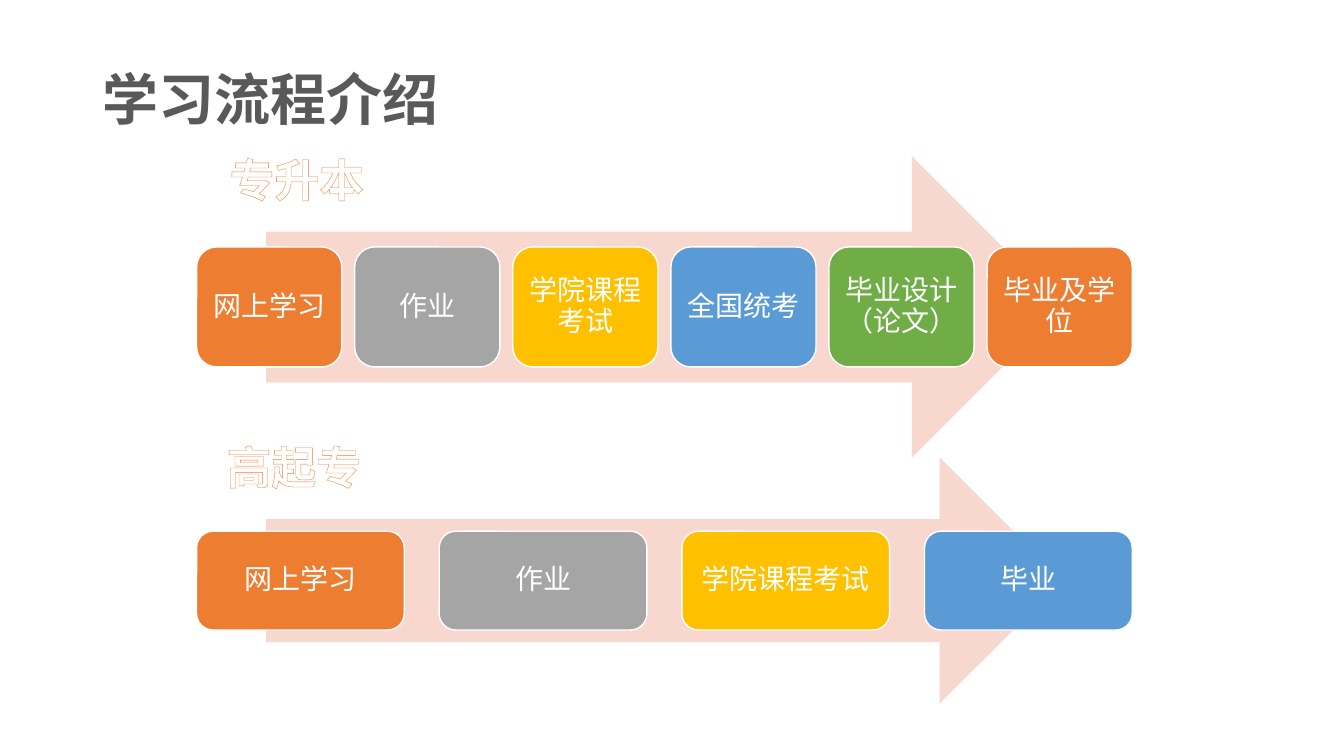
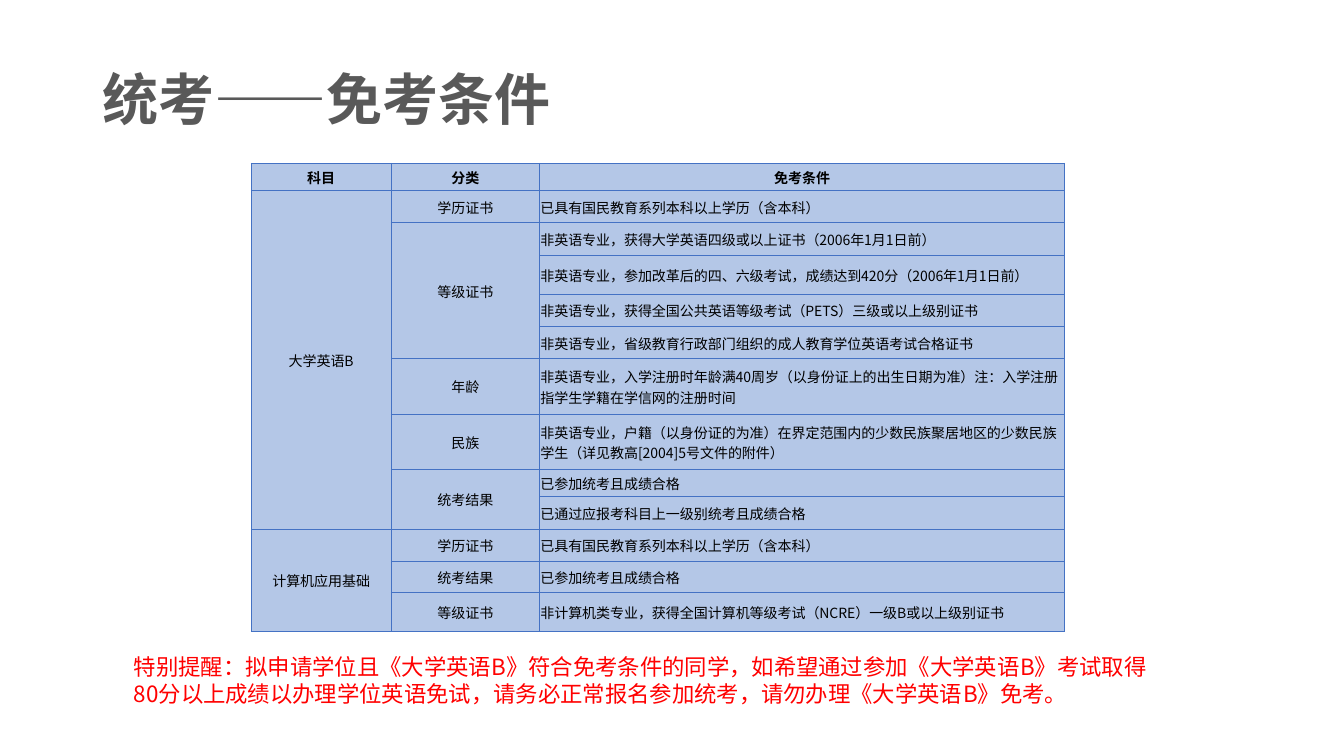
from lxml import etree
from pptx import Presentation
from pptx.dml.color import RGBColor
from pptx.enum import shapes, text
from pptx.oxml import ns
from pptx.util import Inches, Pt

HUES = {
    "title": "595959", "arrow": "F8D7CE", "white": "FFFFFF", "black": "000000",
    "orange": "ED7D31", "gray": "A5A5A5", "gold": "FFC000", "blue": "5B9BD5",
    "green": "70AD47", "cell": "B4C7E7", "border": "4472C4", "red": "FF0000",
}
FACE = "Noto Sans CJK SC"
LEFT, RIGHT = 1.95, 11.23
MID, START = text.PP_ALIGN.CENTER, text.PP_ALIGN.LEFT

FLOWS = [
    dict(name="专升本", spot=(2.17, 1.46), top=1.55, tall=2.99, size=(1.44, 1.19),
         steps=[("网上学习", "orange"), ("作业", "gray"), ("学院课程考试", "gold"),
                ("全国统考", "blue"), ("毕业设计（论文）", "green"),
                ("毕业及学位", "orange")]),
    dict(name="高起专", spot=(2.14, 4.31), top=4.54, tall=2.44, size=(2.06, 0.98),
         steps=[("网上学习", "orange"), ("作业", "gray"), ("学院课程考试", "gold"),
                ("毕业", "blue")]),
]

COLS = [1.39, 1.47, 5.21]
# Row height, subject, category, condition; an empty text joins the cell above.
ROWS = [
    (0.27, "科目", "分类", "免考条件"),
    (0.32, "大学英语B", "学历证书", "已具有国民教育系列本科以上学历（含本科）"),
    (0.32, "", "等级证书", "非英语专业，获得大学英语四级或以上证书（2006年1月1日前）"),
    (0.39, "", "", "非英语专业，参加改革后的四、六级考试，成绩达到420分（2006年1月1日前）"),
    (0.32, "", "", "非英语专业，获得全国公共英语等级考试（PETS）三级或以上级别证书"),
    (0.32, "", "", "非英语专业，省级教育行政部门组织的成人教育学位英语考试合格证书"),
    (0.55, "", "年龄", "非英语专业，入学注册时年龄满40周岁（以身份证上的出生日期为准）"
                       "注：入学注册指学生学籍在学信网的注册时间"),
    (0.55, "", "民族", "非英语专业，户籍（以身份证的为准）在界定范围内的少数民族聚居地区的"
                       "少数民族学生（详见教高[2004]5号文件的附件）"),
    (0.27, "", "统考结果", "已参加统考且成绩合格"),
    (0.32, "", "", "已通过应报考科目上一级别统考且成绩合格"),
    (0.32, "计算机应用基础", "学历证书", "已具有国民教育系列本科以上学历（含本科）"),
    (0.31, "", "统考结果", "已参加统考且成绩合格"),
    (0.39, "", "等级证书", "非计算机类专业，获得全国计算机等级考试（NCRE）一级B或以上级别证书"),
]
NOTE = ("特别提醒：拟申请学位且《大学英语B》符合免考条件的同学，如希望通过参加《大学英语B》"
        "考试取得80分以上成绩以办理学位英语免试，请务必正常报名参加统考，请勿办理《大学英语B》免考。")


def rgb(hue):
    return RGBColor.from_string(HUES[hue])


def stroke(tag, hue, width):
    """Make a solid line element for text outlines and cell borders."""
    line = etree.Element(ns.qn(tag), w=str(Pt(width)))
    fill = etree.SubElement(line, ns.qn("a:solidFill"))
    etree.SubElement(fill, ns.qn("a:srgbClr"), val=HUES[hue])
    return line


def write(frame, words, size=20, hue="white", bold=False, align=MID, face=FACE,
          space=None, edge=None):
    para = frame.paragraphs[0]
    para.alignment = align
    if space:
        para.line_spacing = space
    run = para.add_run()
    run.text = words
    font = run.font
    font.size, font.bold, font.name = Pt(size), bold, face
    font.color.rgb = rgb(hue)
    props = run._r.get_or_add_rPr()
    props.find(ns.qn("a:latin")).addnext(
        etree.Element(ns.qn("a:ea"), typeface=FACE))
    if edge:
        props.insert(0, stroke("a:ln", edge, 0.52))


def label(slide, box, words, wrap=True, anchor=text.MSO_ANCHOR.TOP, **style):
    frame = slide.shapes.add_textbox(*map(Inches, box)).text_frame
    frame.word_wrap = wrap
    frame.vertical_anchor = anchor
    write(frame, words, **style)


def block(slide, kind, box, hue):
    shape = slide.shapes.add_shape(kind, *map(Inches, box))
    shape.shadow.inherit = False
    shape.fill.solid()
    shape.fill.fore_color.rgb = rgb(hue)
    shape.line.fill.background()
    return shape


def step(slide, box, words, hue):
    shape = block(slide, shapes.MSO_SHAPE.ROUNDED_RECTANGLE, box, hue)
    shape.line.color.rgb = rgb("white")
    shape.line.width = Pt(1)
    frame = shape.text_frame
    frame.word_wrap = True
    frame.vertical_anchor = text.MSO_ANCHOR.MIDDLE
    frame.margin_left = frame.margin_right = Inches(0.08)
    frame.margin_top = frame.margin_bottom = Inches(0.08)
    write(frame, words, space=0.9)


def flow(slide, name, spot, top, tall, size, steps):
    """Draw an arrow with evenly spread steps along its middle."""
    block(slide, shapes.MSO_SHAPE.RIGHT_ARROW, (2.64, top, 7.9, tall), "arrow")
    wide, high = size
    pitch = (RIGHT - LEFT - wide) / (len(steps) - 1)
    for i, (words, hue) in enumerate(steps):
        box = (LEFT + i * pitch, top + (tall - high) / 2, wide, high)
        step(slide, box, words, hue)
    label(slide, (*spot, 1.55, 0.64), name, wrap=False, size=32, bold=True,
          face="Arial", edge="orange")


def dress(cell):
    """Give a cell its fill, margins and borders."""
    cell.vertical_anchor = text.MSO_ANCHOR.MIDDLE
    cell.margin_left = cell.margin_right = cell.margin_top = Inches(0.01)
    cell.margin_bottom = 0
    cell.fill.solid()
    cell.fill.fore_color.rgb = rgb("cell")
    props = cell._tc.get_or_add_tcPr()
    for i, side in enumerate("LRTB"):
        props.insert(i, stroke(f"a:ln{side}", "border", 0.5))


def grid(slide, left, top):
    high = sum(row[0] for row in ROWS)
    box = map(Inches, (left, top, sum(COLS), high))
    table = slide.shapes.add_table(len(ROWS), len(COLS), *box).table
    for col, wide in zip(table.columns, COLS):
        col.width = Inches(wide)
    heads = [None] * len(COLS)
    for r, (tall, *words) in enumerate(ROWS):
        table.rows[r].height = Inches(tall)
        for c, word in enumerate(words):
            cell = table.cell(r, c)
            dress(cell)
            if word:
                heads[c] = r
                write(cell.text_frame, word, size=10, hue="black", bold=r == 0,
                      align=START if r and c == 2 else MID)
            elif r + 1 == len(ROWS) or ROWS[r + 1][c + 1]:
                table.cell(heads[c], c).merge(cell)


def page(deck, title):
    slide = deck.slides.add_slide(deck.slide_layouts[6])
    label(slide, (0.92, 0.29, 11.5, 1.45), title, anchor=text.MSO_ANCHOR.MIDDLE,
          size=40, hue="title", bold=True, align=START, space=0.9)
    return slide


def main():
    deck = Presentation()
    deck.slide_width, deck.slide_height = Inches(13.33), Inches(7.5)
    slide = page(deck, "学习流程介绍")
    for item in FLOWS:
        flow(slide, **item)
    slide = page(deck, "统考——免考条件")
    grid(slide, 2.49, 1.62)
    label(slide, (1.23, 6.43, 10.47, 0.64), NOTE, size=16, hue="red", align=START)
    deck.save("out.pptx")


if __name__ == "__main__":
    main()
